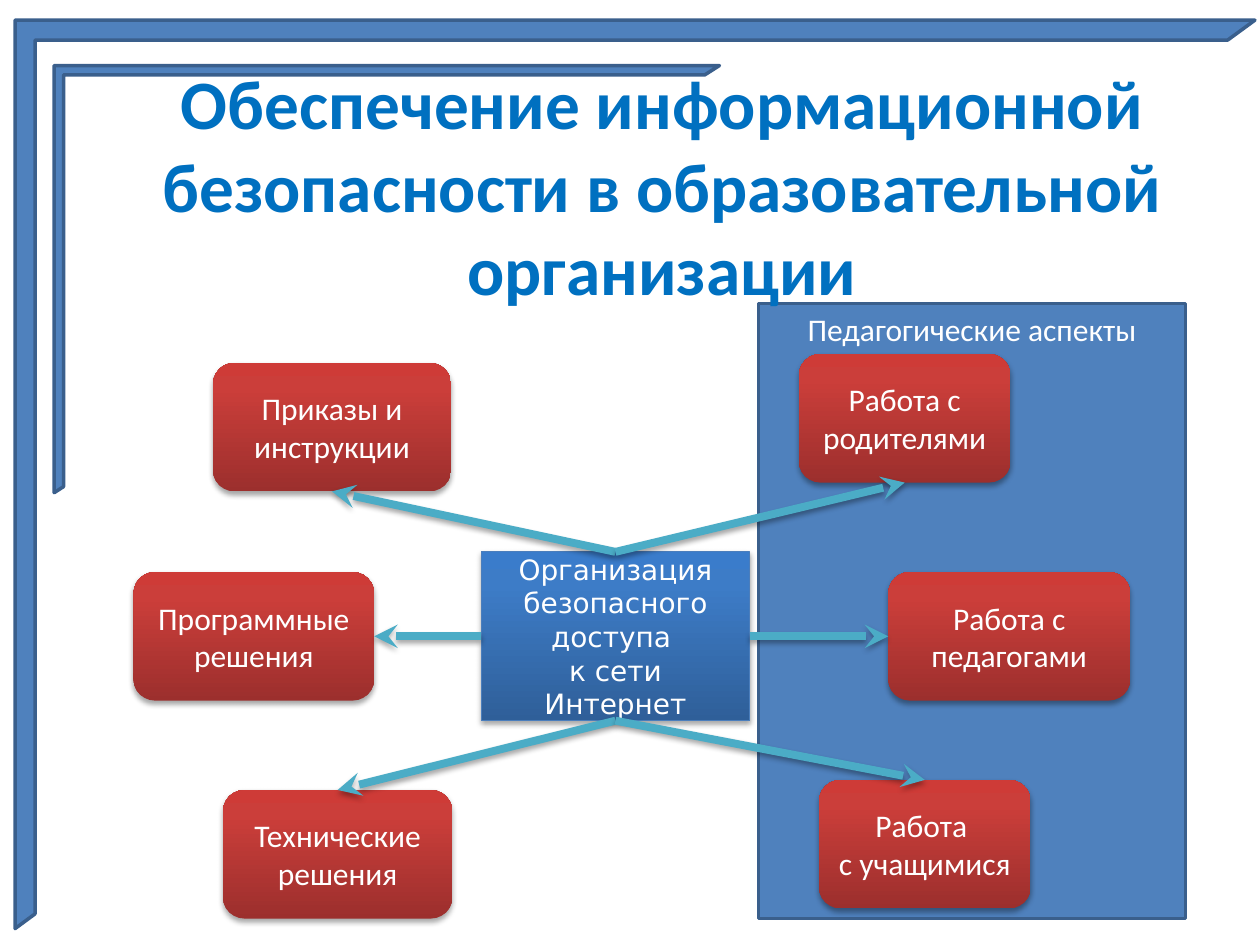
from copy import deepcopy

from pptx import Presentation
from pptx.dml.color import RGBColor
from pptx.enum.shapes import MSO_CONNECTOR as Link, MSO_SHAPE as Kind
from pptx.enum.text import MSO_ANCHOR as Anchor, MSO_AUTO_SIZE as Fit, PP_ALIGN as Align
from pptx.oxml import parse_xml
from pptx.oxml.ns import nsdecls, qn
from pptx.util import Inches, Pt

WHITE = RGBColor(0xFF, 0xFF, 0xFF)
BLUE = RGBColor(0x4F, 0x81, 0xBD)
NAVY = RGBColor(0x3A, 0x5F, 0x8C)
TITLE = RGBColor(0x00, 0x70, 0xC0)
EDGE = RGBColor(0x4B, 0x7E, 0xBC)
TEAL = RGBColor(0x4B, 0xAC, 0xC6)
REDS = [RGBColor(0x9C, 0x2F, 0x2D), RGBColor(0xCB, 0x3E, 0x3A), RGBColor(0xCE, 0x3B, 0x37)]
BLUES = [RGBColor(0x2F, 0x5F, 0x99), RGBColor(0x3D, 0x7C, 0xC7), RGBColor(0x3A, 0x7C, 0xCB)]
STOPS = [0, 0.8, 1]

HEAD = "Обеспечение информационной безопасности в образовательной организации"
PANEL = "Педагогические аспекты"
CORE = ["Организация безопасного доступа ", "к сети Интернет"]
FRAMES = [(0.43, 0.52, 5.28, 3.39), (0.12, 0.16, 9.84, 7.21)]

# Connection sites of a box
TOP, LEFT, BOTTOM, RIGHT = range(4)
TALL = 1.02
# Lines of text, left, top, width, site on the core, site on the node
NODES = [
    (["Приказы и инструкции"], 1.69, 2.88, 1.89, TOP, BOTTOM),
    (["Программные решения"], 1.06, 4.54, 1.91, LEFT, RIGHT),
    (["Технические решения"], 1.77, 6.27, 1.82, BOTTOM, TOP),
    (["Работа с родителями"], 6.34, 2.81, 1.68, TOP, BOTTOM),
    (["Работа с педагогами"], 7.05, 4.54, 1.92, RIGHT, LEFT),
    (["Работа ", "с учащимися"], 6.5, 6.19, 1.68, BOTTOM, TOP),
]


def add_box(kind, box, lines=(), size=18, font="Calibri"):
    shape = slide.shapes.add_shape(kind, *map(Inches, box))
    shape.shadow.inherit = False
    frame = shape.text_frame
    frame.word_wrap = True
    frame.vertical_anchor = Anchor.MIDDLE
    if lines:
        frame.text = "\n".join(lines)
    for para in frame.paragraphs:
        style(para, size, font, WHITE)
    return shape


def style(para, size, font, color):
    para.alignment = Align.CENTER
    para.font.size = Pt(size)
    para.font.name = font
    para.font.color.rgb = color


def paint(shape):
    """Give a flat blue fill and a navy outline."""
    shape.fill.solid()
    shape.fill.fore_color.rgb = BLUE
    shape.line.color.rgb = NAVY
    shape.line.width = Pt(2)


def shade(shape, colors):
    """Fill from bottom to top through three colours, with a shadow."""
    fill = shape.fill
    fill.gradient()
    fill.gradient_angle = 90
    stops = shape._element.spPr.find(".//" + qn("a:gsLst"))
    stops.append(deepcopy(stops[-1]))
    for stop, color, place in zip(fill.gradient_stops, colors, STOPS):
        stop.color.rgb = color
        stop.position = place
    drop(shape)


def drop(shape):
    """Set a soft shadow below the shape."""
    props = shape._element.spPr
    for old in props.findall(qn("a:effectLst")):
        props.remove(old)
    props.append(parse_xml(
        f'<a:effectLst {nsdecls("a")}>'
        '<a:outerShdw blurRad="40000" dist="23000" dir="5400000" rotWithShape="0">'
        '<a:srgbClr val="000000"><a:alpha val="35000"/></a:srgbClr>'
        '</a:outerShdw></a:effectLst>'))


def join(core, start, node, end):
    arrow = slide.shapes.add_connector(Link.STRAIGHT, 0, 0, 0, 0)
    arrow.begin_connect(core, start)
    arrow.end_connect(node, end)
    arrow.line.color.rgb = TEAL
    arrow.line.width = Pt(4.5)
    arrow.line._get_or_add_ln().append(
        parse_xml(f'<a:tailEnd {nsdecls("a")} type="stealth"/>'))
    drop(arrow)


deck = Presentation()
deck.slide_width, deck.slide_height = Inches(10), Inches(7.5)
slide = deck.slides.add_slide(deck.slide_layouts[5])

for box in FRAMES:
    corner = add_box(Kind.HALF_FRAME, box)
    corner.adjustments[0] = corner.adjustments[1] = 0.022
    paint(corner)

panel = add_box(Kind.RECTANGLE, (6.02, 2.41, 3.39, 4.88), [PANEL])
panel.text_frame.vertical_anchor = Anchor.TOP
paint(panel)

title = slide.shapes.title
title.left, title.top, title.width, title.height = map(Inches, (0.51, 0.84, 9.49, 1.25))
title.text_frame.text = HEAD
title.text_frame.auto_size = Fit.NONE
title.text_frame.vertical_anchor = Anchor.MIDDLE
para = title.text_frame.paragraphs[0]
style(para, 39.6, "Calibri", TITLE)
para.font.bold = True
slide.shapes._spTree.append(title._element)  # in front of the panel

core = add_box(Kind.RECTANGLE, (3.82, 4.38, 2.13, 1.34), CORE, 16, "DejaVu Sans")
core.line.color.rgb = EDGE
core.line.width = Pt(0.75)
shade(core, BLUES)

links = []
for lines, left, top, wide, start, end in NODES:
    node = add_box(Kind.ROUNDED_RECTANGLE, (left, top, wide, TALL), lines)
    node.line.fill.background()
    shade(node, REDS)
    links.append((start, node, end))

for link in links:
    join(core, *link)

deck.save("out.pptx")
